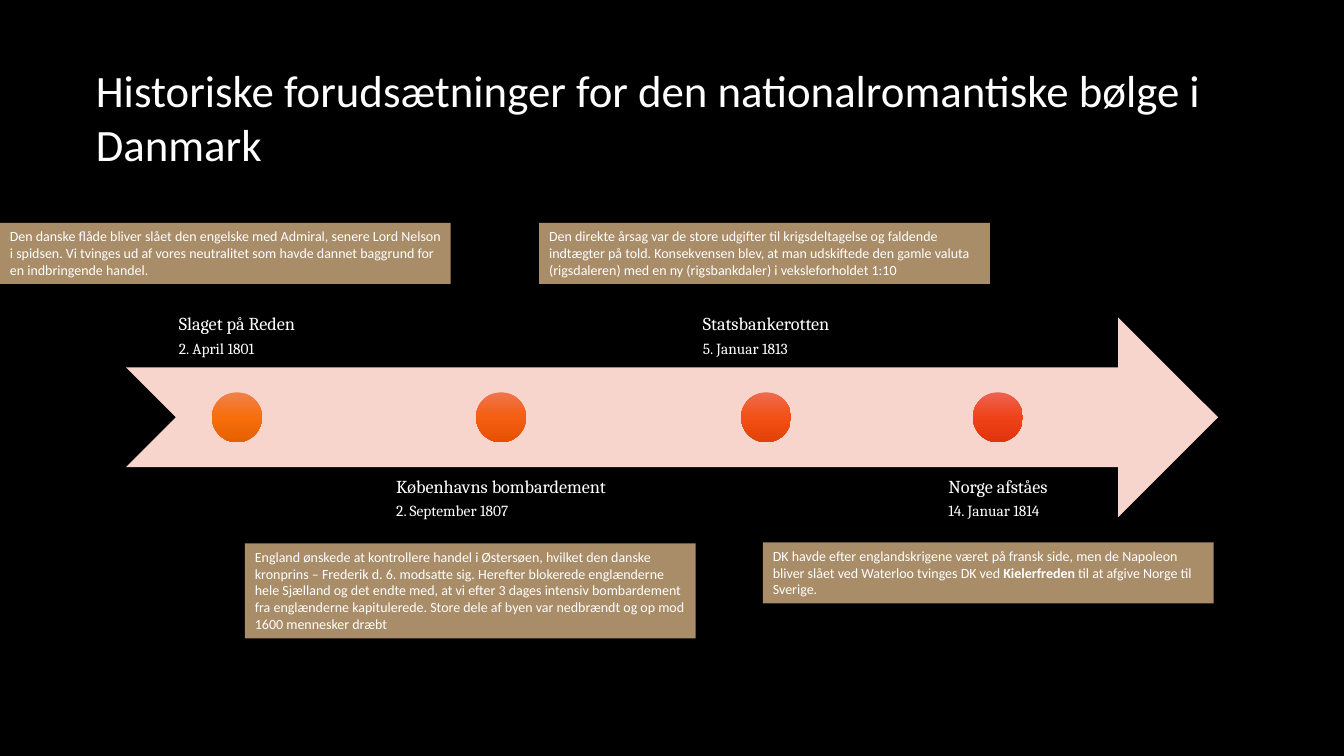
from copy import deepcopy

from pptx import Presentation
from pptx.dml.color import RGBColor
from pptx.enum.shapes import MSO_SHAPE as Shape
from pptx.enum.text import MSO_ANCHOR as Anchor, MSO_AUTO_SIZE as AutoSize, PP_ALIGN as Align
from pptx.oxml.ns import qn
from pptx.oxml.xmlchemy import OxmlElement
from pptx.util import Inches, Pt

WIDTH, HEIGHT = Inches(13.33), Inches(7.5)
COLOURS = {"background": "000000", "text": "FFFFFF", "arrow": "F8D5CC", "callout": "E2BB8B"}
ARROW_LEFT, ARROW_TOP, ARROW_WIDTH, ARROW_HEIGHT = 0.0938, 0.42, 0.8125, 0.264

EVENTS = [
    {"name": "Slaget på Reden", "date": "2. April 1801", "centre": 0.1763, "width": 0.165,
     "above": True, "shades": ("F0814D", "F76E0B", "E56000"), "callout": (0, 0.2947, 0.081),
     "story": ["Den danske flåde bliver slået den engelske med Admiral, senere Lord Nelson i spidsen. "
               "Vi tvinges ud af vores neutralitet som havde dannet baggrund for en indbringende handel."]},
    {"name": "Københavns bombardement", "date": "2. September 1807", "centre": 0.3728, "width": 0.2123,
     "above": False, "shades": ("EF764E", "F45E10", "E55003"), "callout": (0.1823, 0.7187, 0.1257),
     "story": ["England ønskede at kontrollere handel i Østersøen, hvilket den danske kronprins – "
               "Frederik d. 6. modsatte sig. Herefter blokerede englænderne hele Sjælland og det endte "
               "med, at vi efter 3 dages intensiv bombardement fra englænderne kapitulerede. "
               "Store dele af byen var nedbrændt og op mod 1600 mennesker dræbt"]},
    {"name": "Statsbankerotten", "date": "5. Januar 1813", "centre": 0.57, "width": 0.165,
     "above": True, "shades": ("ED6C4F", "F25015", "E24207"), "callout": (0.4012, 0.2947, 0.081),
     "story": ["Den direkte årsag var de store udgifter til krigsdeltagelse og faldende indtægter på told. "
               "Konsekvensen blev, at man udskiftede den gamle valuta (rigsdaleren) med en ny "
               "(rigsbankdaler) i veksleforholdet 1:10"]},
    {"name": "Norge afståes", "date": "14. Januar 1814", "centre": 0.7425, "width": 0.165,
     "above": False, "shades": ("EB6451", "F04219", "E0340C"), "callout": (0.5677, 0.7173, 0.081),
     "story": ["DK havde efter englandskrigene været på fransk side, men de Napoleon bliver slået ved "
               "Waterloo tvinges DK ved ", "Kielerfreden", " til at afgive Norge til Sverige."]},
]


def share(left, top, width, height):
    """Turn shares of the slide into a position and a size."""
    return round(left * WIDTH), round(top * HEIGHT), round(width * WIDTH), round(height * HEIGHT)


def style(run, size, font):
    """Format a run in the slide's text colour."""
    run.font.size, run.font.name = Pt(size), font
    run.font.color.rgb = RGBColor.from_string(COLOURS["text"])


def add_plain(slide, kind, area, colour=None):
    """Add a preset shape without line or shadow."""
    shape = slide.shapes.add_shape(kind, *area)
    shape.shadow.inherit = False
    shape.line.fill.background()
    if colour:
        shape.fill.solid()
        shape.fill.fore_color.rgb = RGBColor.from_string(colour)
    return shape


def add_title(slide, wording):
    """Fill and place the title."""
    title = slide.shapes.title
    title.left, title.top, title.width, title.height = share(0.0638, 0.076, 0.8635, 0.1573)
    frame = title.text_frame
    frame.text = wording
    frame.word_wrap, frame.auto_size = True, AutoSize.SHAPE_TO_FIT_TEXT
    frame.vertical_anchor = Anchor.TOP
    frame.paragraphs[0].alignment = Align.LEFT
    style(frame.paragraphs[0].runs[0], 32, "Calibri")


def add_label(slide, event):
    """Add an event's name and date above or below the arrow."""
    offset = -0.75 if event["above"] else 0.75
    label = slide.shapes.add_textbox(*share(event["centre"] - event["width"] / 2,
                                            ARROW_TOP + offset * ARROW_HEIGHT,
                                            event["width"], ARROW_HEIGHT))
    frame = label.text_frame
    frame.text = event["name"] + "\n" + event["date"]
    frame.word_wrap = True
    frame.vertical_anchor = Anchor.BOTTOM if event["above"] else Anchor.TOP
    frame.margin_left = frame.margin_right = frame.margin_top = frame.margin_bottom = Inches(0.1)
    label.element.txBody.bodyPr.set("anchorCtr", "1")
    for paragraph, size, gap in zip(frame.paragraphs, (13, 11), (4.55, 1.65)):
        paragraph.line_spacing, paragraph.space_after = 0.9, Pt(gap)
        style(paragraph.runs[0], size, "Cambria")


def add_dot(slide, event):
    """Add an event's shaded dot on the arrow's middle line."""
    diameter = ARROW_HEIGHT / 4
    across = diameter * HEIGHT / WIDTH
    dot = add_plain(slide, Shape.OVAL, share(event["centre"] - across / 2,
                                             ARROW_TOP + 1.5 * diameter, across, diameter))
    dot.fill.gradient()
    dot.fill.gradient_angle = 270
    stops = dot.element.spPr.find(".//" + qn("a:gsLst"))
    stops.insert(1, deepcopy(stops[0]))
    for stop, place, shade in zip(dot.fill.gradient_stops, (0, 0.5, 1), event["shades"]):
        stop.position = place
        stop.color.rgb = RGBColor.from_string(shade)


def add_callout(slide, event):
    """Add an event's story in a translucent box."""
    left, top, height = event["callout"]
    callout = add_plain(slide, Shape.RECTANGLE, share(left, top, 0.3353, height), COLOURS["callout"])
    alpha = OxmlElement("a:alpha")
    alpha.set("val", "75000")
    callout.element.spPr.find(qn("a:solidFill"))[0].append(alpha)
    frame = callout.text_frame
    frame.word_wrap, frame.auto_size = True, AutoSize.SHAPE_TO_FIT_TEXT
    frame.vertical_anchor = Anchor.TOP
    paragraph = frame.paragraphs[0]
    paragraph.alignment = Align.LEFT
    for index, wording in enumerate(event["story"]):
        run = paragraph.add_run()
        run.text = wording
        run.font.bold = index == 1
        style(run, 10, "Calibri")


def main():
    """Build the timeline slide."""
    deck = Presentation()
    deck.slide_width, deck.slide_height = WIDTH, HEIGHT
    slide = deck.slides.add_slide(deck.slide_layouts[5])
    slide.background.fill.solid()
    slide.background.fill.fore_color.rgb = RGBColor.from_string(COLOURS["background"])
    add_title(slide, "Historiske forudsætninger for den nationalromantiske bølge i Danmark")
    add_plain(slide, Shape.NOTCHED_RIGHT_ARROW,
              share(ARROW_LEFT, ARROW_TOP, ARROW_WIDTH, ARROW_HEIGHT), COLOURS["arrow"])
    for event in EVENTS:
        add_label(slide, event)
        add_dot(slide, event)
        add_callout(slide, event)
    deck.save("out.pptx")


if __name__ == "__main__":
    main()
